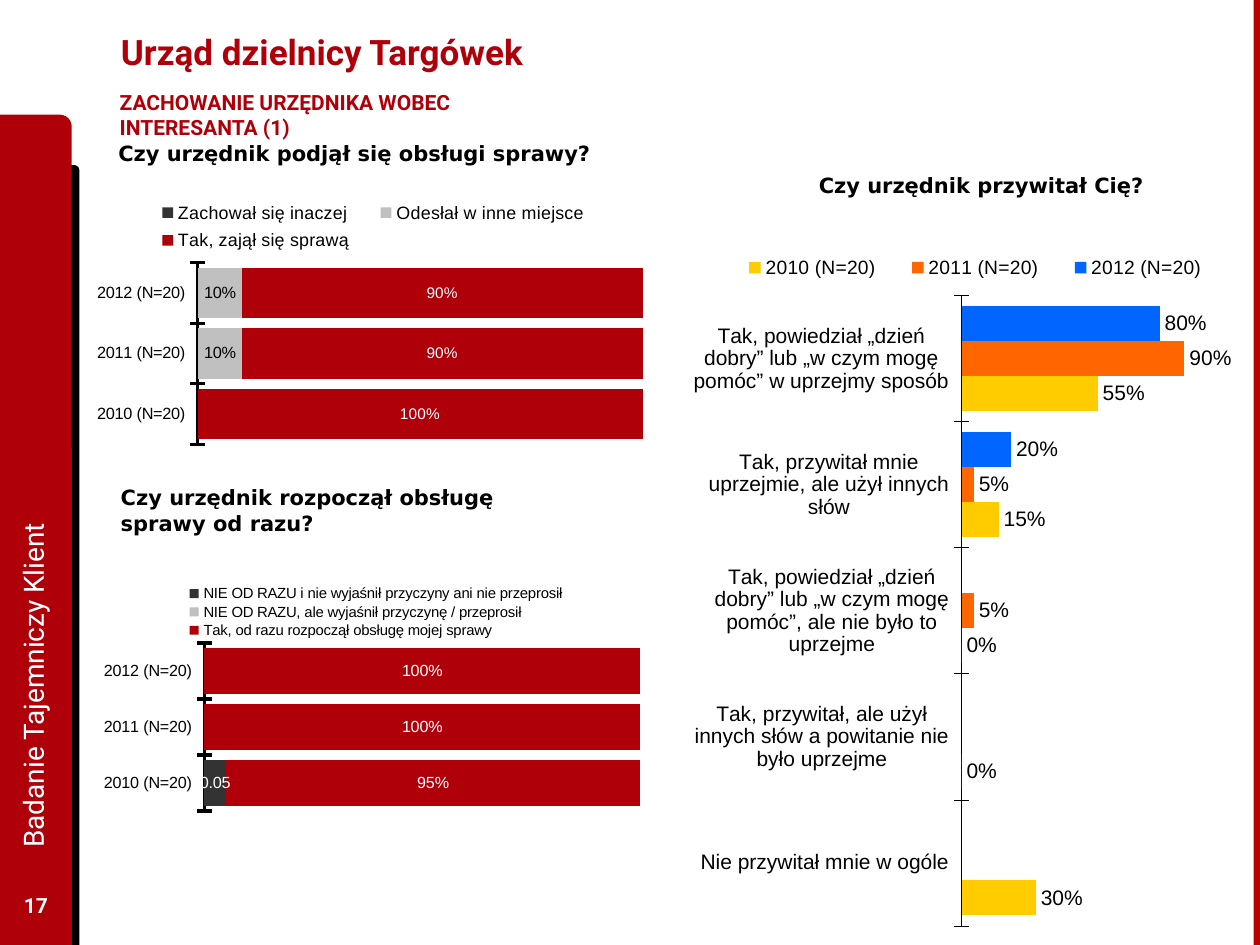
"""Build a slide with three bar charts on how an official treated the client."""
from lxml import etree
from pptx import Presentation
from pptx import util as u
from pptx.chart import data
from pptx.dml import color
from pptx.enum import chart as ch, shapes, text
from pptx.oxml import ns

RED, BLACK, WHITE, GREY, DARK = "AF000A", "000000", "FFFFFF", "C0C0C0", "333333"
HEADING_FONT, CHART_FONT, QUESTION_FONT = "Roboto", "Arial", "DejaVu Sans"
YEARS = ["2010 (N=20)", "2011 (N=20)", "2012 (N=20)"]


def rgb(value):
    return color.RGBColor.from_string(value)


def style_font(font, size, hue=BLACK, name=CHART_FONT, bold=False):
    font.size, font.name, font.bold = u.Pt(size), name, bold
    font.color.rgb = rgb(hue)


def make_layout(box, inner=False):
    layout = etree.Element(ns.qn("c:layout"))
    manual = etree.SubElement(layout, ns.qn("c:manualLayout"))
    entries = [("layoutTarget", "inner")] if inner else []
    entries += [("xMode", "edge"), ("yMode", "edge")] + list(zip("xywh", box))
    for tag, value in entries:
        etree.SubElement(manual, ns.qn(f"c:{tag}")).set("val", str(value))
    return layout


def place_layout(parent, index, box, inner=False):
    for old in parent.findall(ns.qn("c:layout")):
        parent.remove(old)
    parent.insert(index, make_layout(box, inner))


class SlideBuilder:
    def __init__(self, slide):
        self.slide = slide

    def panel(self, box, fill, kind=shapes.MSO_SHAPE.ROUND_1_RECTANGLE):
        panel = self.slide.shapes.add_shape(kind, *map(u.Inches, box))
        panel.shadow.inherit = False
        panel.fill.solid()
        panel.fill.fore_color.rgb = rgb(fill)
        panel.line.fill.background()

    def wording(self, frame, words, size, hue, name, bold=True, align=text.PP_ALIGN.LEFT):
        frame.text = words
        paragraph = frame.paragraphs[0]
        paragraph.alignment = align
        style_font(paragraph.runs[0].font, size, hue, name, bold)

    def title(self, box, words):
        title = self.slide.shapes.title
        title.left, title.top, title.width, title.height = map(u.Inches, box)
        title.text_frame.vertical_anchor = text.MSO_ANCHOR.MIDDLE
        self.wording(title.text_frame, words, 20, RED, HEADING_FONT)

    def label(self, box, words, size, hue, name, wrap=True, inset=0.1,
              anchor=text.MSO_ANCHOR.TOP, rotation=0, **style):
        label = self.slide.shapes.add_textbox(*map(u.Inches, box))
        label.rotation = rotation
        frame = label.text_frame
        frame.word_wrap, frame.vertical_anchor = wrap, anchor
        frame.margin_left = frame.margin_right = u.Inches(inset)
        self.wording(frame, words, size, hue, name, **style)

    def question(self, box, words):
        self.label(box, words, 12, BLACK, QUESTION_FONT)

    def bars(self, box, categories, series, plot_box, legend_box, axis_size,
             legend_size, line_width, stacked=True):
        chart_data = data.CategoryChartData(number_format="0%")
        chart_data.categories = categories
        for name, values, *_ in series:
            chart_data.add_series(name, values)
        kind = ch.XL_CHART_TYPE.BAR_STACKED_100 if stacked else ch.XL_CHART_TYPE.BAR_CLUSTERED
        chart = self.slide.shapes.add_chart(kind, *map(u.Inches, box), chart_data).chart
        chart.has_title = False
        style_font(chart.font, axis_size)

        plot = chart.plots[0]
        plot.vary_by_categories = False
        plot.gap_width, plot.overlap = (20, 100) if stacked else (60, 0)
        position = ch.XL_LABEL_POSITION.CENTER if stacked else ch.XL_LABEL_POSITION.OUTSIDE_END
        for bar, (_, _, fill, ink, size, number_format) in zip(plot.series, series):
            bar.format.fill.solid()
            bar.format.fill.fore_color.rgb = rgb(fill)
            bar.invert_if_negative = False
            labels = bar.data_labels
            labels.show_value = True
            labels.number_format, labels.number_format_is_linked = number_format, False
            labels.position = position
            style_font(labels.font, size, ink)

        axis = chart.category_axis
        axis.reverse_order = not stacked
        axis.major_tick_mark = ch.XL_TICK_MARK.CROSS
        axis.format.line.width = u.Pt(line_width)
        axis.format.line.color.rgb = rgb(BLACK)
        style_font(axis.tick_labels.font, axis_size)
        scale = chart.value_axis
        scale.visible = scale.has_major_gridlines = False
        scale.minimum_scale, scale.maximum_scale, scale.major_unit = 0, 1, 0.2

        chart.has_legend = True
        legend = chart.legend
        legend.position = ch.XL_LEGEND_POSITION.TOP if stacked else ch.XL_LEGEND_POSITION.RIGHT
        legend.include_in_layout = False
        style_font(legend.font, legend_size)
        place_layout(legend._element, 1, legend_box)
        place_layout(chart._chartSpace.chart.plotArea, 0, plot_box, inner=True)


def main():
    deck = Presentation()
    deck.slide_width, deck.slide_height = u.Inches(10), u.Inches(7.5)
    page = SlideBuilder(deck.slides.add_slide(deck.slide_layouts[5]))

    page.panel((0.39, 1.31, 0.24, 6.19), BLACK)
    page.panel((0, 0.91, 0.57, 6.59), RED)
    page.panel((9.95, 0, 0.05, 7.5), "BD0000", shapes.MSO_SHAPE.RECTANGLE)

    page.title((0.86, 0.05, 7.77, 0.72), "Urząd dzielnicy Targówek")
    page.label((0.75, 0.66, 3.85, 0.33), "ZACHOWANIE URZĘDNIKA WOBEC INTERESANTA (1)",
               12, RED, HEADING_FONT, wrap=False, inset=0.2)
    page.question((0.86, 3.8, 3.89, 0.5), "Czy urzędnik rozpoczął obsługę sprawy od razu?")
    page.question((0.84, 1.07, 3.98, 0.3), "Czy urzędnik podjął się obsługi sprawy?")
    page.question((6.4, 1.32, 2.86, 0.3), "Czy urzędnik przywitał Cię?")

    greetings = [
        "Tak, powiedział „dzień dobry” lub „w czym mogę pomóc” w uprzejmy sposób",
        "Tak, przywitał mnie uprzejmie, ale użył innych słów",
        "Tak, powiedział „dzień dobry” lub „w czym mogę pomóc”, ale nie było to uprzejme",
        "Tak, przywitał, ale użył innych słów a powitanie nie było uprzejme",
        "Nie przywitał mnie w ogóle",
    ]
    greeting_shares = [
        (YEARS[2], (0.8, 0.2, None, None, None), "0066FF", BLACK, 12, "0%"),
        (YEARS[1], (0.9, 0.05, 0.05, None, None), "FF6600", BLACK, 12, "0%"),
        (YEARS[0], (0.55, 0.15, 0, 0, 0.3), "FFCC00", BLACK, 12, "0%"),
    ]
    page.bars((5.49, 1.79, 4.37, 5.56), greetings, greeting_shares,
              (0.49, 0.1, 0.45, 0.9), (0.05, 0.03, 0.93, 0.06), 12, 11, 0.25, stacked=False)

    start_shares = [
        ("NIE OD RAZU i nie wyjaśnił przyczyny ani nie przeprosił",
         (0.05, None, None), DARK, WHITE, 9.3, "General"),
        ("NIE OD RAZU, ale wyjaśnił przyczynę / przeprosił",
         (None, None, None), GREY, WHITE, 9.2, "General"),
        ("Tak, od razu rozpoczął obsługę mojej sprawy",
         (0.95, 1, 1), RED, WHITE, 9.2, "0%"),
    ]
    page.bars((0.81, 4.61, 4.27, 1.84), YEARS, start_shares,
              (0.19, 0.27, 0.81, 0.73), (0.15, 0.01, 0.72, 0.25), 9.2, 8.5, 1.84)

    handling_shares = [
        ("Zachował się inaczej", (None, None, None), DARK, WHITE, 9.3, "General"),
        ("Odesłał w inne miejsce", (None, 0.1, 0.1), GREY, BLACK, 9.3, "0%"),
        ("Tak, zajął się sprawą", (1, 0.9, 0.9), RED, WHITE, 8.8, "0%"),
    ]
    page.bars((0.74, 1.53, 4.36, 2.06), YEARS, handling_shares,
              (0.19, 0.27, 0.81, 0.7), (0.08, 0.01, 0.86, 0.24), 9.3, 10.2, 1.86)

    page.label((0, 6.98, 0.57, 0.4), "17", 12, WHITE, HEADING_FONT,
               anchor=text.MSO_ANCHOR.MIDDLE, align=text.PP_ALIGN.CENTER)
    page.label((-2.62, 3.69, 5.76, 0.51), "Badanie Tajemniczy Klient", 16, WHITE, HEADING_FONT,
               anchor=text.MSO_ANCHOR.MIDDLE, rotation=270, bold=False)

    deck.save("out.pptx")


if __name__ == "__main__":
    main()
